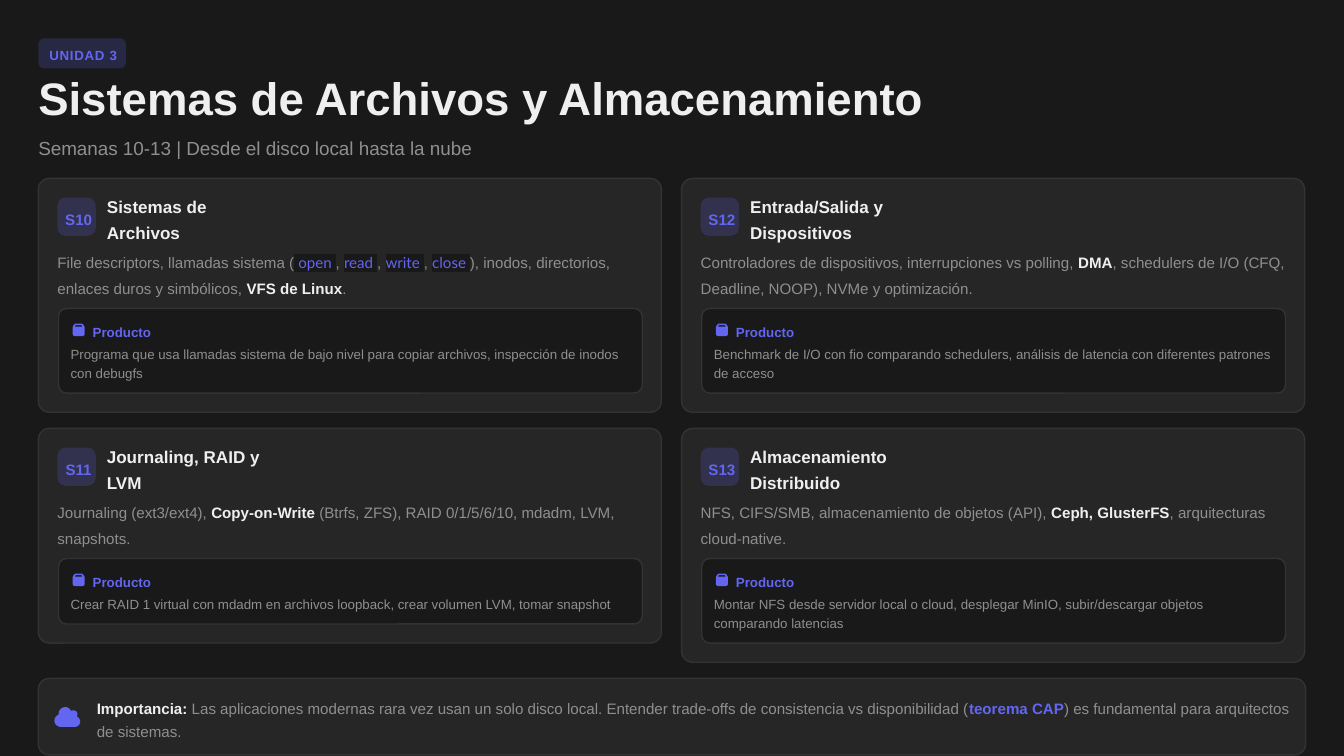
import pptx
import pptx.dml.color
import pptx.enum.shapes
import pptx.enum.text
import pptx.oxml.ns
import pptx.util
from lxml import etree

Inches = pptx.util.Inches
ALIGN = pptx.enum.text.PP_ALIGN

DARK, PANEL, BORDER = "191919", "262626", "333333"
ACCENT, WHITE, GRAY = "6366F1", "EFEFEF", "8F8F8F"
TINT = 20
MARGIN, COLUMN_STEP, CARD_WIDTH = 0.38, 6.38, 6.18
CARD_TOP, ROW_STEP = 1.77, 2.48

# Run styles: colour, bold, font, highlight
STYLES = {
    "plain": (GRAY, False, "Arial", None),
    "strong": (WHITE, True, "Arial", None),
    "accent": (ACCENT, True, "Arial", None),
    "code": (ACCENT, False, "Lato", DARK),
}

# Column, row, code, title, title width, description runs, product, product lines
CARDS = [
    (0, 0, "S10", "Sistemas de Archivos", 1.68,
     [("File descriptors, llamadas sistema (", "plain"), (" open ", "code"), (", ", "plain"),
      ("read ", "code"), (", ", "plain"), ("write ", "code"), (", ", "plain"), ("close ", "code"),
      ("), inodos, directorios, enlaces duros y simbólicos, ", "plain"),
      ("VFS de Linux", "strong"), (".", "plain")],
     "Programa que usa llamadas sistema de bajo nivel para copiar archivos, "
     "inspección de inodos con debugfs", 2),
    (0, 1, "S11", "Journaling, RAID y LVM", 1.83,
     [("Journaling (ext3/ext4), ", "plain"), ("Copy-on-Write", "strong"),
      (" (Btrfs, ZFS), RAID 0/1/5/6/10, mdadm, LVM, snapshots.", "plain")],
     "Crear RAID 1 virtual con mdadm en archivos loopback, crear volumen LVM, tomar snapshot", 1),
    (1, 0, "S12", "Entrada/Salida y Dispositivos", 2.25,
     [("Controladores de dispositivos, interrupciones vs polling, ", "plain"), ("DMA", "strong"),
      (", schedulers de I/O (CFQ, Deadline, NOOP), NVMe y optimización.", "plain")],
     "Benchmark de I/O con fio comparando schedulers, análisis de latencia "
     "con diferentes patrones de acceso", 2),
    (1, 1, "S13", "Almacenamiento Distribuido", 2.2,
     [("NFS, CIFS/SMB, almacenamiento de objetos (API), ", "plain"), ("Ceph, GlusterFS", "strong"),
      (", arquitecturas cloud-native.", "plain")],
     "Montar NFS desde servidor local o cloud, desplegar MinIO, "
     "subir/descargar objetos comparando latencias", 2),
]

# Icon outlines in hundredths of an inch
BAG_OUTLINES = [
    [(0, 3.6), (0.8, 2), (2, 0.5), (3, 0), (9, 0), (10, 0.5), (11.2, 2), (12, 3.6),
     (12, 10.5), (11.4, 11.8), (10, 12.4), (2, 12.4), (0.6, 11.8), (0, 10.5)],
    [(10, 3.1), (9, 1.6), (3, 1.6), (2, 3.1)],
]
CLOUD_START = (0, 14)
CLOUD_CURVES = [
    [(0, 17.5), (3, 20.2), (6.5, 20.2)], [(10, 20.2), (16, 20.2), (20, 20.2)],
    [(23, 20.2), (25.5, 18), (25.5, 15)], [(25.5, 12.5), (24, 10.5), (22, 10)],
    [(22.6, 9.2), (22.8, 8.5), (22.8, 7.5)], [(22.8, 5.2), (21, 3.8), (19, 3.8)],
    [(18, 3.8), (17, 4), (16.5, 4.4)], [(15.3, 2), (13.3, 0.5), (10.8, 0.5)],
    [(7.2, 0.5), (4.2, 3.5), (4.2, 7)], [(4.2, 7.4), (4.2, 7.8), (4.3, 8)],
    [(1.8, 8.9), (0, 11.3), (0, 14)],
]


def rgb(color):
    return pptx.dml.color.RGBColor.from_string(color)


def paint(shape, color, line=None, alpha=None):
    shape.shadow.inherit = False
    shape.fill.solid()
    shape.fill.fore_color.rgb = rgb(color)
    if alpha:
        clr = shape.fill._xPr.find(".//" + pptx.oxml.ns.qn("a:srgbClr"))
        etree.SubElement(clr, pptx.oxml.ns.qn("a:alpha"), val=str(alpha * 1000))
    if line:
        shape.line.color.rgb = rgb(line)
        shape.line.width = pptx.util.Pt(1)
    else:
        shape.line.fill.background()


def add_panel(slide, left, top, width, height, radius, color, line=None, alpha=None):
    shape = slide.shapes.add_shape(
        pptx.enum.shapes.MSO_SHAPE.ROUNDED_RECTANGLE,
        Inches(left), Inches(top), Inches(width), Inches(height))
    shape.adjustments[0] = radius / min(width, height)
    paint(shape, color, line, alpha)


def add_text(slide, left, top, width, height, runs, size, spacing, align=ALIGN.LEFT):
    """Add one paragraph of (text, style) runs and return it."""
    frame = slide.shapes.add_textbox(
        Inches(left), Inches(top), Inches(width), Inches(height)).text_frame
    frame.word_wrap = True
    frame.vertical_anchor = pptx.enum.text.MSO_ANCHOR.MIDDLE
    frame.margin_left = frame.margin_right = frame.margin_top = frame.margin_bottom = 0
    paragraph = frame.paragraphs[0]
    paragraph.line_spacing = spacing
    paragraph.alignment = align
    for text, style in runs:
        color, bold, font, highlight = STYLES[style]
        run = paragraph.add_run()
        run.text = text
        run.font.size = pptx.util.Pt(size)
        run.font.bold = bold
        run.font.color.rgb = rgb(color)
        if highlight:
            mark = etree.SubElement(run.font._element, pptx.oxml.ns.qn("a:highlight"))
            etree.SubElement(mark, pptx.oxml.ns.qn("a:srgbClr"), val=highlight)
        run.font.name = font
    return paragraph


def add_icon(slide, left, top, outlines):
    contours = [[(Inches(left + x / 100), Inches(top + y / 100)) for x, y in outline]
                for outline in outlines]
    builder = slide.shapes.build_freeform(*contours[0][0])
    builder.add_line_segments(contours[0][1:])
    for contour in contours[1:]:
        builder.move_to(*contour[0])
        builder.add_line_segments(contour[1:])
    paint(builder.convert_to_shape(), ACCENT)


def trace_curves(start, curves, steps=8):
    """Return points along a chain of cubic curves."""
    points = [start]
    for curve in curves:
        corners = [points[-1], *curve]
        for step in range(1, steps + 1):
            t = step / steps
            weights = ((1 - t) ** 3, 3 * t * (1 - t) ** 2, 3 * t * t * (1 - t), t ** 3)
            points.append(tuple(sum(weight * corner[axis] for weight, corner in zip(weights, corners))
                                for axis in (0, 1)))
    return points


def add_header(slide, left, top):
    add_panel(slide, left, top, 0.87, 0.3, 0.06, ACCENT, alpha=TINT)
    tag = add_text(slide, left + 0.11, top + 0.06, 0.74, 0.19, [("UNIDAD 3", "accent")], 9.5, 1.2)
    tag.runs[0].font._element.set("spc", "50")
    add_text(slide, left, top + 0.41, 12.81, 0.45,
             [("Sistemas de Archivos y Almacenamiento", "strong")], 32.5, 0.8)
    add_text(slide, left, top + 0.94, 12.68, 0.26,
             [("Semanas 10-13 | Desde el disco local hasta la nube", "plain")], 13.5, 1.2)


def add_product(slide, left, top, width, height, product, lines):
    add_panel(slide, left, top, width, height, 0.08, DARK, BORDER)
    add_icon(slide, left + 0.14, top + 0.15, BAG_OUTLINES)
    add_text(slide, left + 0.34, top + 0.12, 5.4, 0.19, [("Producto", "accent")], 9.5, 1.2)
    add_text(slide, left + 0.12, top + 0.34, 5.62, 0.19 * lines, [(product, "plain")], 9.5, 1.2)


def add_card(slide, left, top, code, title, title_width, description, product, lines):
    product_height = 0.46 + 0.19 * lines
    add_panel(slide, left, top, CARD_WIDTH, 1.48 + product_height, 0.11, PANEL, BORDER)
    add_panel(slide, left + 0.19, top + 0.19, 0.38, 0.38, 0.08, ACCENT, alpha=TINT)
    add_text(slide, left + 0.21, top + 0.27, 0.38, 0.23, [(code, "accent")], 10.8, 1.3, ALIGN.CENTER)
    add_text(slide, left + 0.68, top + 0.25, title_width, 0.26, [(title, "strong")], 12.2, 1.3)
    add_text(slide, left + 0.19, top + 0.68, 5.87, 0.49, description, 10.8, 1.4)
    add_product(slide, left + 0.2, top + 1.29, 5.79, product_height, product, lines)


def add_footer(slide, left, top):
    add_panel(slide, left, top, 12.57, 0.76, 0.11, PANEL, BORDER)
    add_icon(slide, left + 0.16, top + 0.28, [trace_curves(CLOUD_START, CLOUD_CURVES)])
    add_text(slide, left + 0.58, top + 0.16, 11.91, 0.45, [
        ("Importancia:", "strong"),
        (" Las aplicaciones modernas rara vez usan un solo disco local. Entender trade-offs "
         "de consistencia vs disponibilidad (", "plain"),
        ("teorema CAP", "accent"),
        (") es fundamental para arquitectos de sistemas.", "plain")], 10.8, 1.3)


def main():
    presentation = pptx.Presentation()
    presentation.slide_width, presentation.slide_height = Inches(13.33), Inches(7.5)
    slide = presentation.slides.add_slide(presentation.slide_layouts[6])
    slide.background.fill.solid()
    slide.background.fill.fore_color.rgb = rgb(DARK)
    add_header(slide, MARGIN, 0.38)
    for column, row, *content in CARDS:
        add_card(slide, MARGIN + column * COLUMN_STEP, CARD_TOP + row * ROW_STEP, *content)
    add_footer(slide, MARGIN, 6.73)
    presentation.save("out.pptx")


if __name__ == "__main__":
    main()
